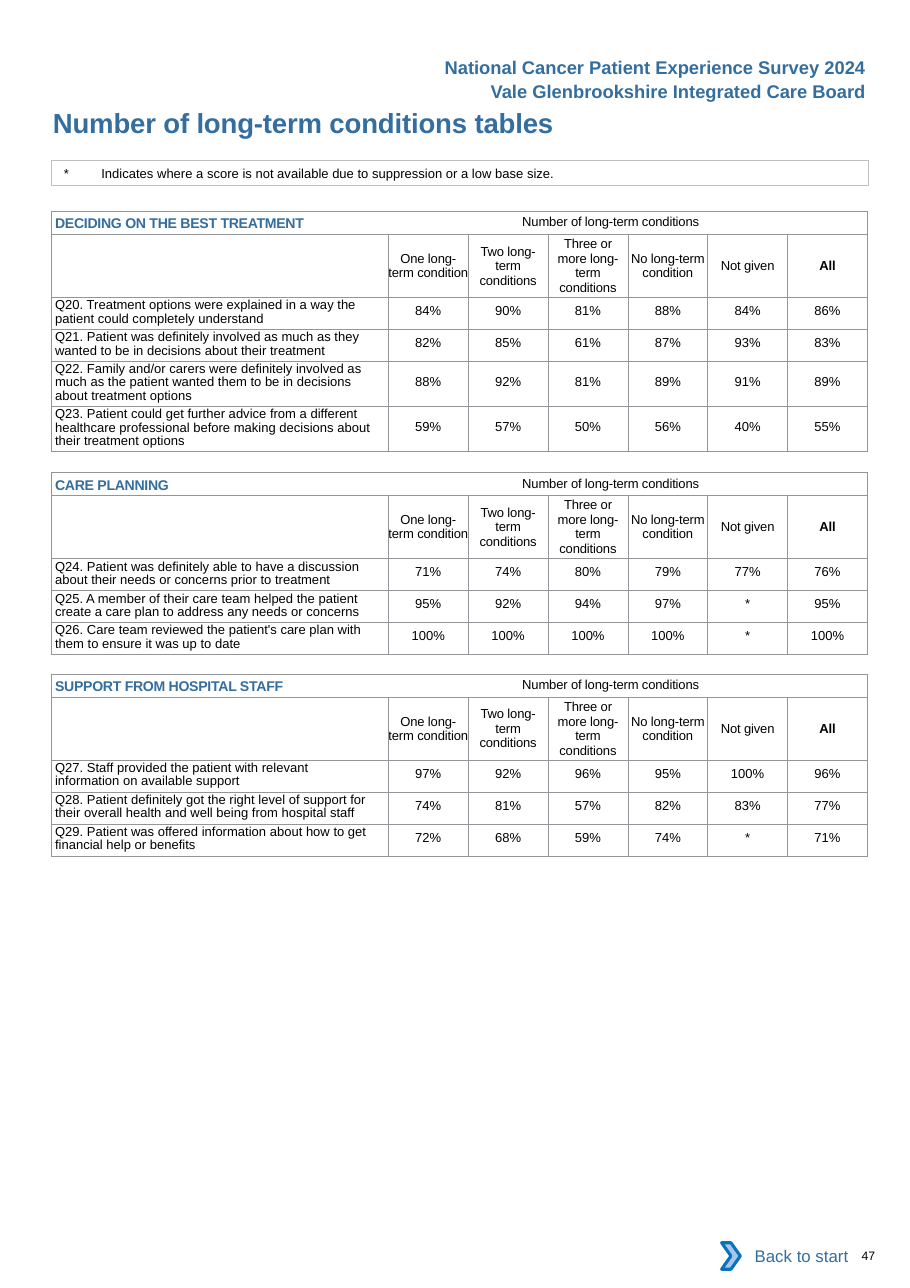
"""Builds the page of survey score tables by number of long-term conditions."""
from dataclasses import dataclass
from typing import Optional

from lxml import etree
from pptx import Presentation
from pptx import util as u
from pptx.dml.color import RGBColor
from pptx.enum import shapes, text
from pptx.oxml import ns

PITCH = 0.1
MARGIN = 4.7
BLUE, BLACK, WHITE = "336E9F", "000000", "FFFFFF"
COLUMNS = [30.55] + [7.25] * 6
TITLE_ROW, HEADING_ROW = 2.1, 5.7
ROW_HEIGHTS = {2: 2.9, 3: 4.1}
VALUE_INSETS = {2: 0.6, 3: 1.2}
GROUPS = ["One long-term condition", "Two long-term conditions",
          "Three or more long-term conditions", "No long-term condition",
          "Not given", "All"]


@dataclass(frozen=True)
class Box:
    """Place and size in grid columns and rows."""
    column: float
    row: float
    width: float
    height: float

    def lengths(self) -> tuple[int, int, int, int]:
        """Return left, top, width and height as slide lengths."""
        return grid(self.column), grid(self.row), grid(self.width), grid(self.height)


@dataclass(frozen=True)
class Question:
    """Survey question with its scores and its number of text lines."""
    wording: str
    scores: str
    lines: int = 2


@dataclass(frozen=True)
class Section:
    """Titled group of questions starting at a grid row."""
    heading: str
    row: float
    questions: list[Question]


SECTIONS = [
    Section("DECIDING ON THE BEST TREATMENT", 19.2, [
        Question("Q20. Treatment options were explained in a way the patient could "
                 "completely understand", "84% 90% 81% 88% 84% 86%"),
        Question("Q21. Patient was definitely involved as much as they wanted to be in "
                 "decisions about their treatment", "82% 85% 61% 87% 93% 83%"),
        Question("Q22. Family and/or carers were definitely involved as much as the patient "
                 "wanted them to be in decisions about treatment options",
                 "88% 92% 81% 89% 91% 89%", 3),
        Question("Q23. Patient could get further advice from a different healthcare "
                 "professional before making decisions about their treatment options",
                 "59% 57% 50% 56% 40% 55%", 3)]),
    Section("CARE PLANNING", 42.9, [
        Question("Q24. Patient was definitely able to have a discussion about their needs "
                 "or concerns prior to treatment", "71% 74% 80% 79% 77% 76%"),
        Question("Q25. A member of their care team helped the patient create a care plan to "
                 "address any needs or concerns", "95% 92% 94% 97% * 95%"),
        Question("Q26. Care team reviewed the patient's care plan with them to ensure it was "
                 "up to date", "100% 100% 100% 100% * 100%")]),
    Section("SUPPORT FROM HOSPITAL STAFF", 61.2, [
        Question("Q27. Staff provided the patient with relevant information on available "
                 "support", "97% 92% 96% 95% 100% 96%"),
        Question("Q28. Patient definitely got the right level of support for their overall "
                 "health and well being from hospital staff", "74% 81% 57% 82% 83% 77%"),
        Question("Q29. Patient was offered information about how to get financial help or "
                 "benefits", "72% 68% 59% 74% * 71%")]),
]


def grid(steps: float) -> int:
    """Turn grid steps into a slide length."""
    return u.Inches(steps * PITCH)


def colour(code: str) -> RGBColor:
    """Turn a hex string into a colour."""
    return RGBColor.from_string(code)


def write(paragraph, words: str, *, size: float = 8.5, ink: str = BLACK, bold: bool = False,
          spacing: float = 0, baseline: int = 0, align: Optional[text.PP_ALIGN] = None,
          indent: float = 0, tab: float = 0, leading: Optional[float] = None) -> None:
    """Add formatted words to a paragraph."""
    run = paragraph.add_run()
    run.text = words
    run.font.name, run.font.size, run.font.bold = "Arial", u.Pt(size), bold
    run.font.color.rgb = colour(ink)
    if spacing:
        run.font._element.set("spc", str(round(spacing * 100)))
    if baseline:
        run.font._element.set("baseline", str(baseline * 1000))
    if align is not None:
        paragraph.alignment = align
    if leading:
        paragraph.line_spacing = u.Pt(leading)
    properties = paragraph._p.get_or_add_pPr()
    if indent:
        properties.set("marL", str(grid(indent)))
        properties.set("indent", "0")
    if tab:
        properties.set("defTabSz", str(grid(tab)))
        stops = etree.SubElement(properties, ns.qn("a:tabLst"))
        etree.SubElement(stops, ns.qn("a:tab"), pos=str(grid(tab)), algn="l")


def inset(holder, top: float = 0, right: float = 0, bottom: float = 0) -> None:
    """Set the inner margins of a cell or text frame."""
    holder.margin_left, holder.margin_top = 0, grid(top)
    holder.margin_right, holder.margin_bottom = grid(right), grid(bottom)


def add_label(holder, box: Box, words: str, **style) -> None:
    """Add a text box of one line with default margins."""
    frame = holder.add_textbox(*box.lengths()).text_frame
    frame.word_wrap = False
    write(frame.paragraphs[0], words, **style)


def add_panel(holder, kind: shapes.MSO_SHAPE, box: Box, fill: Optional[str] = None,
              edge: Optional[str] = None, weight: float = 0.5):
    """Add a flat preset shape and return it."""
    panel = holder.add_shape(kind, *box.lengths())
    panel.shadow.inherit = False
    if fill:
        panel.fill.solid()
        panel.fill.fore_color.rgb = colour(fill)
    else:
        panel.fill.background()
    if edge:
        panel.line.color.rgb = colour(edge)
        panel.line.width = u.Pt(weight)
    else:
        panel.line.fill.background()
    return panel


def rule_cell(cell) -> None:
    """Give a cell thin grey borders and no fill."""
    properties = cell._tc.get_or_add_tcPr()
    for side in ("lnL", "lnR", "lnT", "lnB"):
        border = etree.SubElement(properties, ns.qn(f"a:{side}"), w=str(u.Pt(0.5)))
        paint = etree.SubElement(border, ns.qn("a:solidFill"))
        etree.SubElement(paint, ns.qn("a:srgbClr"), val="939598")
    cell.fill.background()


def add_scores(slide, section: Section) -> None:
    """Add the score table of one section."""
    heights = [TITLE_ROW, HEADING_ROW] + [ROW_HEIGHTS[q.lines] for q in section.questions]
    box = Box(MARGIN, section.row, sum(COLUMNS), sum(heights))
    scores = slide.shapes.add_table(len(heights), len(COLUMNS), *box.lengths()).table
    scores.first_row = scores.horz_banding = False
    for column, width in zip(scores.columns, COLUMNS):
        column.width = grid(width)
    for row, height in zip(scores.rows, heights):
        row.height = grid(height)
    for cell in scores.iter_cells():
        inset(cell)
        rule_cell(cell)
    heading = scores.cell(0, 0)
    heading.merge(scores.cell(0, len(GROUPS)))
    heading.vertical_anchor = text.MSO_ANCHOR.MIDDLE
    line = heading.text_frame.paragraphs[0]
    write(line, section.heading + "\t", size=15.8, ink=BLUE, bold=True, baseline=-8,
          spacing=-0.15, indent=0.3, tab=42.4, leading=11.8)
    write(line, "Number of long-term conditions", spacing=-0.1)
    for place, group in enumerate(GROUPS, 1):
        cell = scores.cell(1, place)
        cell.vertical_anchor = text.MSO_ANCHOR.MIDDLE
        write(cell.text_frame.paragraphs[0], group, bold=group == "All", spacing=-0.1,
              align=text.PP_ALIGN.CENTER)
    for row, question in enumerate(section.questions, 2):
        wording = scores.cell(row, 0)
        inset(wording, top=0.2, right=1.5)
        write(wording.text_frame.paragraphs[0], question.wording, indent=0.3, leading=8.6)
        for place, score in enumerate(question.scores.split(), 1):
            cell = scores.cell(row, place)
            inset(cell, top=VALUE_INSETS[question.lines])
            write(cell.text_frame.paragraphs[0], score, align=text.PP_ALIGN.CENTER)


def main() -> None:
    """Build and save the slide."""
    deck = Presentation()
    deck.slide_width, deck.slide_height = grid(82.6), grid(116.9)
    slide = deck.slides.add_slide(deck.slide_layouts[5])
    title = slide.shapes.title
    title.left, title.top, title.width, title.height = Box(MARGIN, 9.6, 46.6, 3).lengths()
    inset(title.text_frame)
    title.text_frame.vertical_anchor = text.MSO_ANCHOR.TOP
    title.text_frame.auto_size = text.MSO_AUTO_SIZE.NONE
    write(title.text_frame.paragraphs[0], "Number of long-term conditions tables", size=18,
          ink=BLUE, bold=True, spacing=-0.1, indent=0.1, align=text.PP_ALIGN.LEFT)
    for section in SECTIONS:
        add_scores(slide, section)
    note = add_panel(slide.shapes, shapes.MSO_SHAPE.RECTANGLE,
                     Box(MARGIN, 14.6, 74.1, 2.2), edge="BFBFBF").text_frame
    inset(note, top=0.4, bottom=0.4)
    note.vertical_anchor = text.MSO_ANCHOR.TOP
    write(note.paragraphs[0], "*\tIndicates where a score is not available due to suppression "
          "or a low base size.", indent=1.1, tab=3.4, align=text.PP_ALIGN.LEFT)
    banner = dict(size=12, ink=BLUE, bold=True, align=text.PP_ALIGN.RIGHT)
    add_label(slide.shapes, Box(42.6, 6.8, 37, 3), "Vale Glenbrookshire Integrated Care Board",
              **banner)
    add_label(slide.shapes, Box(39.2, 4.6, 40.4, 3),
              "National Cancer Patient Experience Survey 2024", **banner)
    back = slide.shapes.add_group_shape().shapes
    button = add_panel(back, shapes.MSO_SHAPE.RECTANGLE, Box(66.2, 111.9, 11.8, 4.2), fill=WHITE)
    write(button.text_frame.paragraphs[0], "Back to start", size=11, ink=BLUE,
          align=text.PP_ALIGN.RIGHT)
    add_panel(back, shapes.MSO_SHAPE.CHEVRON, Box(65.5, 112.8, 1.7, 2.4),
              fill="A8C7E9", edge="0A74BB", weight=2)
    page = slide.shapes.add_textbox(*Box(77.2, 113.3, 5.1, 1.3).lengths()).text_frame
    inset(page)
    page.word_wrap = True
    write(page.paragraphs[0], "47", size=8, indent=1)
    deck.save("out.pptx")


if __name__ == "__main__":
    main()
